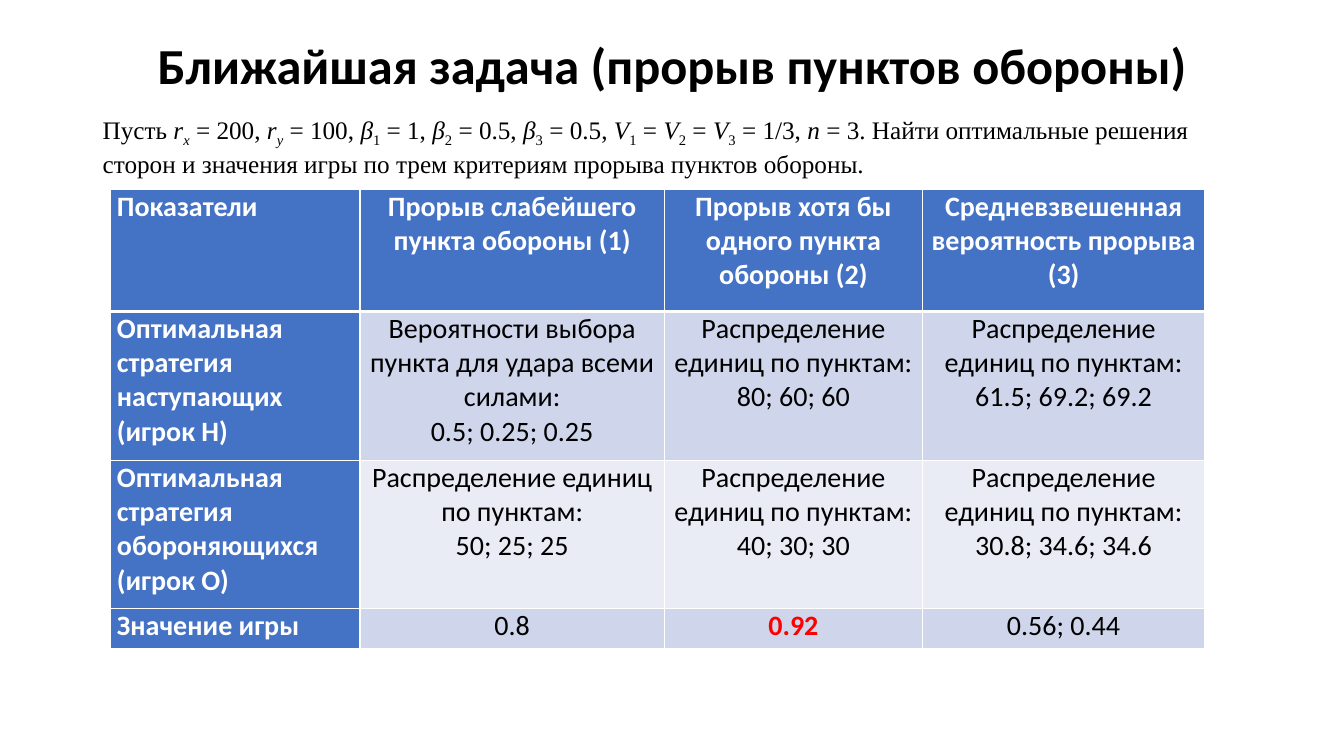
from lxml import etree
from pptx import Presentation
from pptx.dml.color import RGBColor
from pptx.enum.text import MSO_ANCHOR, PP_ALIGN
from pptx.oxml.ns import qn
from pptx.util import Inches, Pt

CENTER, LEFT, JUSTIFY = PP_ALIGN.CENTER, PP_ALIGN.LEFT, PP_ALIGN.JUSTIFY
MIDDLE = MSO_ANCHOR.MIDDLE

COLORS = {
    "black": "000000", "white": "FFFFFF", "red": "FF0000",
    "header": "4472C4", "band_dark": "CFD5EA", "band_light": "E9EBF5",
}
TITLE = "Ближайшая задача (прорыв пунктов обороны)"

# (variable, subscript, text that follows)
INTRO = "Пусть "
TERMS = [
    ("r", "x", " = 200, "), ("r", "y", " = 100, "),
    ("β", "1", " = 1, "), ("β", "2", " = 0.5, "), ("β", "3", " = 0.5, "),
    ("V", "1", " = "), ("V", "2", " = "), ("V", "3", " = 1/3, "),
    ("n", "", " = 3. Найти оптимальные решения сторон и значения игры "
              "по трем критериям прорыва пунктов обороны."),
]

UNITS = "Распределение единиц по пунктам:\n"
ROWS = [
    ["Показатели", "Прорыв слабейшего пункта обороны (1)",
     "Прорыв хотя бы одного пункта обороны (2)",
     "Средневзвешенная вероятность прорыва (3)"],
    ["Оптимальная стратегия наступающих (игрок Н)",
     "Вероятности выбора пункта для удара всеми силами:\n0.5; 0.25; 0.25",
     UNITS + "80; 60; 60", UNITS + "61.5; 69.2; 69.2"],
    ["Оптимальная стратегия обороняющихся (игрок О)",
     UNITS + "50; 25; 25", UNITS + "40; 30; 30", UNITS + "30.8; 34.6; 34.6"],
    ["Значение игры", "0.8", "0.92", "0.56; 0.44"],
]
BEST_VALUE = (3, 2)
COL_WIDTHS = [2.48, 3.02, 2.56, 2.8]
ROW_HEIGHTS = [1.21, 1.48, 1.47, 0.4]


def rgb(name):
    return RGBColor.from_string(COLORS[name])


def set_font(font, name, size, color, bold=False):
    font.name, font.size, font.bold = name, Pt(size), bold
    font.color.rgb = rgb(color)


def add_text_box(s, left, top, width, height):
    tf = s.shapes.add_textbox(Inches(left), Inches(top),
                              Inches(width), Inches(height)).text_frame
    tf.word_wrap = True
    return tf


def add_problem(p):
    """Write the terms with italic variables and lowered subscripts."""
    set_font(p.font, "Times New Roman", 18, "black")
    p.add_run().text = INTRO
    for variable, subscript, rest in TERMS:
        r = p.add_run()
        r.text, r.font.italic = variable, True
        if subscript:
            r = p.add_run()
            r.text, r.font.italic = subscript, subscript.isalpha()
            r.font._element.set("baseline", "-25000")
        p.add_run().text = rest


def set_borders(cell, bottom):
    """Draw white cell borders; must run before the cell's fill is set."""
    tc_pr = cell._tc.get_or_add_tcPr()
    for side, width in (("L", 1), ("R", 1), ("T", 1), ("B", bottom)):
        ln = etree.SubElement(tc_pr, qn(f"a:ln{side}"), w=str(Pt(width)))
        fill = etree.SubElement(ln, qn("a:solidFill"))
        etree.SubElement(fill, qn("a:srgbClr"), val=COLORS["white"])


def fill_cell(cell, row, col, text):
    heading = row == 0 or col == 0
    best = (row, col) == BEST_VALUE
    set_borders(cell, 3 if row == 0 else 1)
    cell.fill.solid()
    band = "band_dark" if row % 2 else "band_light"
    cell.fill.fore_color.rgb = rgb("header" if heading else band)
    cell.margin_left = cell.margin_right = Inches(0.07)
    cell.margin_top = cell.margin_bottom = 0
    cell.text = text
    color = "white" if heading else "red" if best else "black"
    for p in cell.text_frame.paragraphs:
        p.alignment = CENTER if col else LEFT if row else JUSTIFY
        set_font(p.font, "Calibri", 20, color, heading or best)


def add_results(s):
    table = s.shapes.add_table(
        len(ROWS), len(COL_WIDTHS), Inches(1.09), Inches(1.88),
        Inches(sum(COL_WIDTHS)), Inches(sum(ROW_HEIGHTS))).table
    for column, width in zip(table.columns, COL_WIDTHS):
        column.width = Inches(width)
    for table_row, height in zip(table.rows, ROW_HEIGHTS):
        table_row.height = Inches(height)
    table.first_col = True
    for row, texts in enumerate(ROWS):
        for col, text in enumerate(texts):
            fill_cell(table.cell(row, col), row, col, text)


def main():
    prs = Presentation()
    prs.slide_width, prs.slide_height = Inches(13.33), Inches(7.5)
    s = prs.slides.add_slide(prs.slide_layouts[6])

    tf = add_text_box(s, 0.92, 0.28, 11.5, 0.8)
    tf.vertical_anchor = MIDDLE
    p = tf.paragraphs[0]
    p.text, p.alignment, p.line_spacing = TITLE, CENTER, 0.9
    set_font(p.font, "Calibri", 36, "black", True)

    add_problem(add_text_box(s, 0.92, 1.08, 11.66, 0.71).paragraphs[0])
    add_results(s)
    prs.save("out.pptx")


if __name__ == "__main__":
    main()
